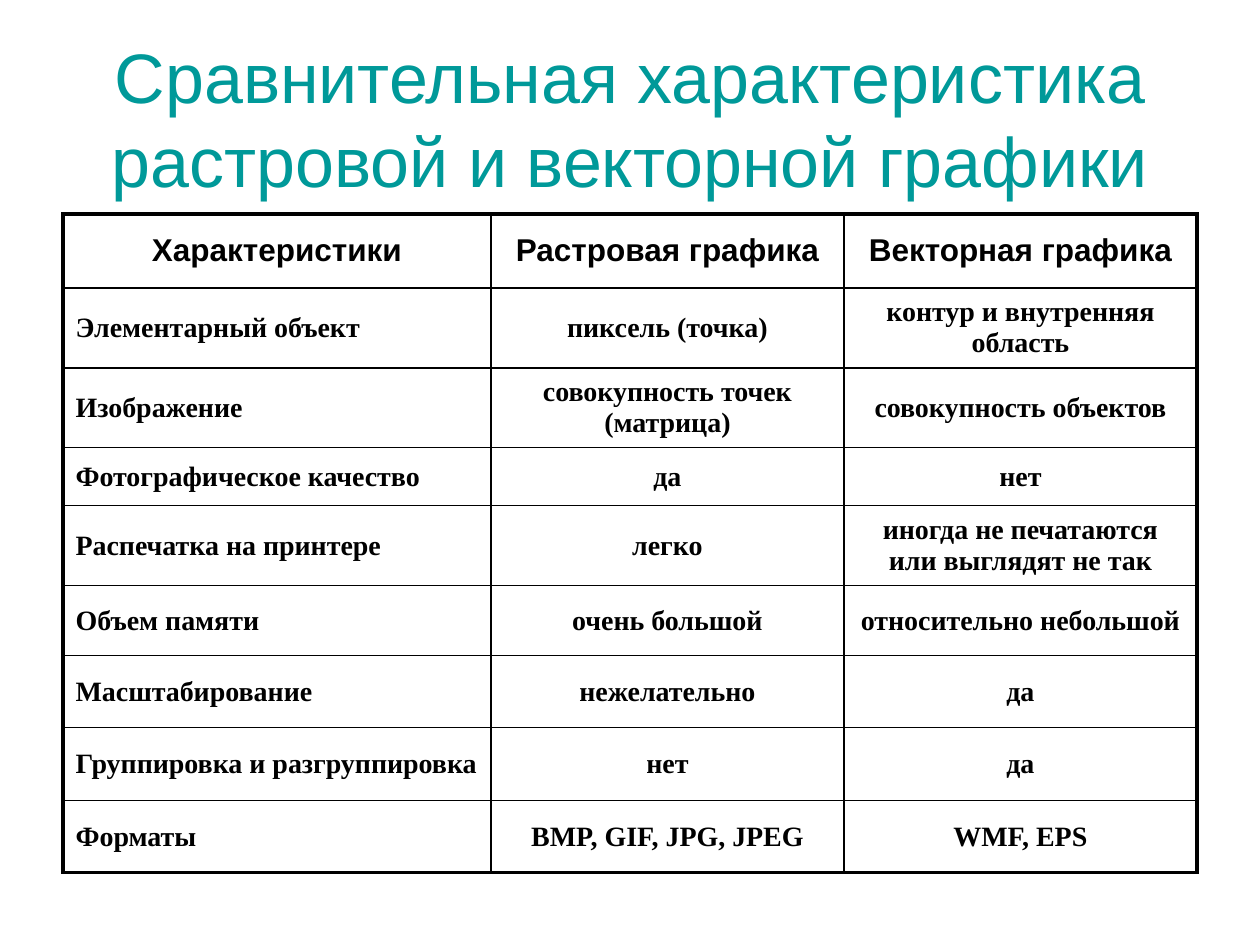
from lxml import etree
from pptx import Presentation
from pptx import util as u
from pptx.dml.color import RGBColor
from pptx.enum import text
from pptx.oxml.ns import qn

HEADINGS = ["Характеристики", "Растровая графика", "Векторная графика"]
COMPARISON = [
    ["Элементарный объект", "пиксель (точка)", "контур и внутренняя область"],
    ["Изображение", "совокупность точек (матрица)", "совокупность объектов"],
    ["Фотографическое качество", "да", "нет"],
    ["Распечатка на принтере", "легко", "иногда не печатаются или выглядят не так"],
    ["Объем памяти", "очень большой", "относительно небольшой"],
    ["Масштабирование", "нежелательно", "да"],
    ["Группировка и разгруппировка", "нет", "да"],
    ["Форматы", "BMP, GIF, JPG, JPEG", "WMF, EPS"],
]
COLUMN_WIDTHS = [428, 353, 353]
ROW_HEIGHTS = [74, 80, 79, 58, 80, 70, 72, 73, 72]


def px(length):
    return u.Emu(round(length * 914400 / 126))


def color(value):
    return RGBColor.from_string(value)


class SlideBuilder:
    accent, ink, paper = "009999", "000000", "FFFFFF"
    heading_font, body_font = "Arial", "Times New Roman"
    outer_line, inner_line = 2.25, 1

    def __init__(self, slide):
        self.slide = slide
        slide.background.fill.solid()
        slide.background.fill.fore_color.rgb = color(self.paper)

    def style(self, paragraph, font, size, ink, bold, align):
        paragraph.alignment = align
        paragraph.font.name = font
        paragraph.font.size = u.Pt(size)
        paragraph.font.bold = bold
        paragraph.font.color.rgb = color(ink)

    def title(self, words, left, top, width, height):
        frame = self.slide.shapes.add_textbox(
            px(left), px(top), px(width), px(height)).text_frame
        frame.word_wrap = True
        frame.vertical_anchor = text.MSO_ANCHOR.MIDDLE
        frame.text = words
        self.style(frame.paragraphs[0], self.heading_font, 40, self.accent,
                   False, text.PP_ALIGN.CENTER)

    def borders(self, cell, widths):
        properties = cell._tc.get_or_add_tcPr()
        # Border lines come before the fill, in the order of the schema
        for position, (side, width) in enumerate(widths.items()):
            line = etree.Element(qn(f"a:ln{side}"), w=str(u.Pt(width)))
            fill = etree.SubElement(line, qn("a:solidFill"))
            etree.SubElement(fill, qn("a:srgbClr"), val=self.ink)
            properties.insert(position, line)

    def table(self, rows, left, top, widths, heights):
        table = self.slide.shapes.add_table(
            len(rows), len(widths), px(left), px(top),
            px(sum(widths)), px(sum(heights))).table
        table.horz_banding = False
        for column, width in zip(table.columns, widths):
            column.width = px(width)
        for row, height in zip(table.rows, heights):
            row.height = px(height)

        last_row, last_column = len(rows) - 1, len(widths) - 1
        for r, row in enumerate(rows):
            for c, words in enumerate(row):
                cell = table.cell(r, c)
                cell.text = words
                cell.vertical_anchor = text.MSO_ANCHOR.MIDDLE
                cell.fill.background()
                is_heading = r == 0
                is_label = c == 0 and not is_heading
                self.style(
                    cell.text_frame.paragraphs[0],
                    self.heading_font if is_heading else self.body_font,
                    18 if is_heading else 16, self.ink, True,
                    text.PP_ALIGN.LEFT if is_label else text.PP_ALIGN.CENTER)
                edges = {"L": c == 0, "R": c == last_column,
                         "T": r == 0, "B": r == last_row}
                self.borders(cell, {
                    side: self.outer_line if outer else self.inner_line
                    for side, outer in edges.items()})


def main():
    deck = Presentation()
    deck.slide_width, deck.slide_height = px(1260), px(945)
    builder = SlideBuilder(deck.slides.add_slide(deck.slide_layouts[6]))

    # Title
    builder.title("Сравнительная характеристика растровой и векторной графики",
                  63, 38, 1134, 158)

    # Comparison table
    builder.table([HEADINGS] + COMPARISON, 63, 214, COLUMN_WIDTHS, ROW_HEIGHTS)

    deck.save("out.pptx")


if __name__ == "__main__":
    main()
